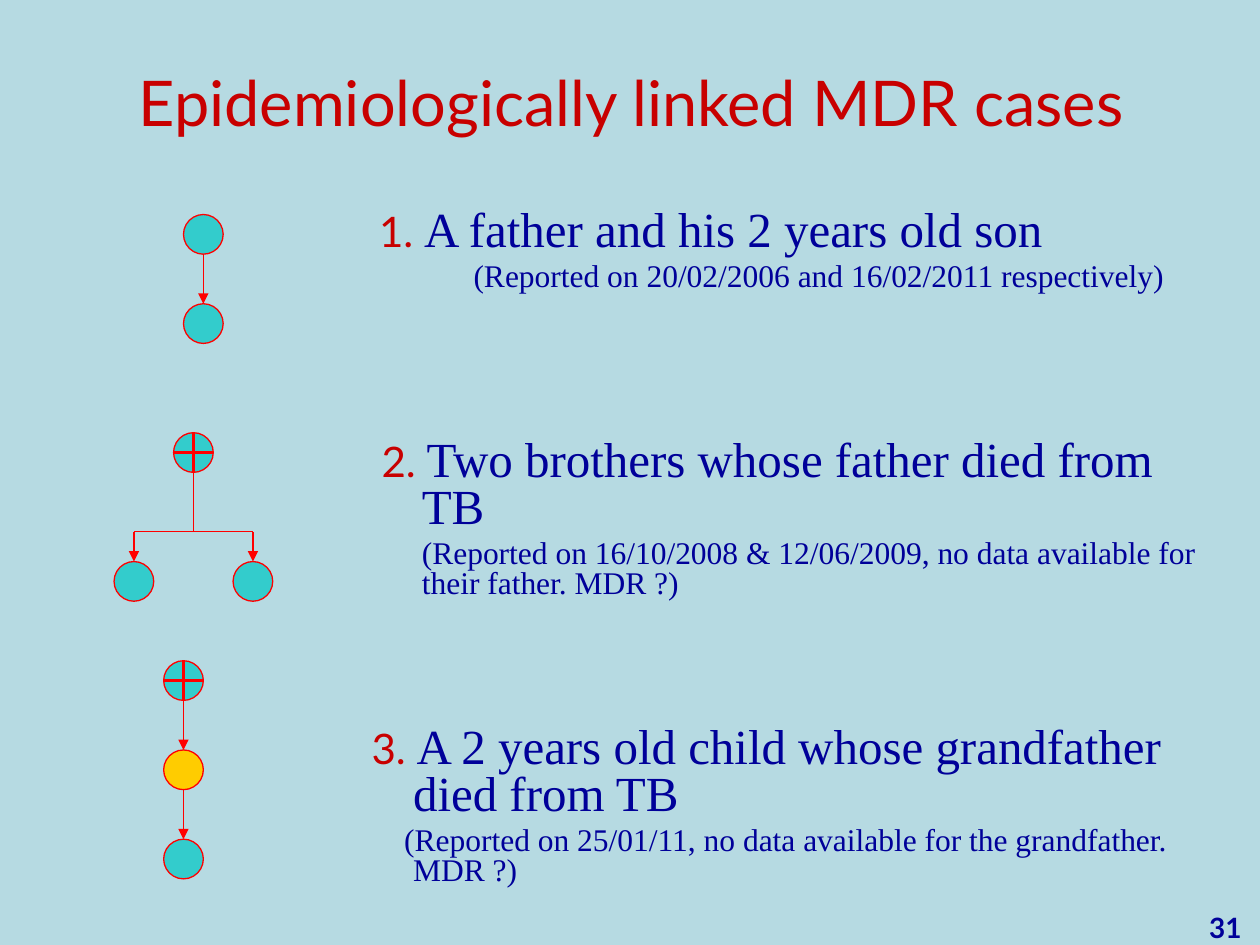
from dataclasses import dataclass
from typing import NamedTuple

from lxml.etree import SubElement
from pptx import Presentation
from pptx.dml.color import RGBColor
from pptx.enum.shapes import MSO_CONNECTOR as Link, MSO_SHAPE as Shape
from pptx.enum.text import MSO_ANCHOR as Anchor, PP_ALIGN as Align
from pptx.oxml.ns import qn
from pptx.util import Inches, Pt


@dataclass(frozen=True)
class Theme:
    background: str = "B6DAE2"
    accent: str = "C80000"
    ink: str = "000099"
    edge: str = "FF0000"
    person: str = "33CCCC"
    highlight: str = "FFCC00"
    sans: str = "Lato"
    serif: str = "Times New Roman"
    title: int = 36
    number: int = 24
    heading: int = 28
    detail: int = 18
    page: int = 16
    thin: float = 0.75
    thick: float = 1.5


class Grid(NamedTuple):
    unit: float = 0.0787
    left: float = 0.04
    top: float = 0.05

    def x(self, column: float) -> int:
        return Inches(self.left + column * self.unit)

    def y(self, row: float) -> int:
        return Inches(self.top + row * self.unit)


class Person(NamedTuple):
    column: int
    row: int
    dead: bool = False
    fill: str = Theme.person


class Arrow(NamedTuple):
    start: tuple
    end: tuple
    head: bool = True


class Case(NamedTuple):
    left: float
    top: float
    width: float
    number: str
    heading: str
    detail: str
    number_at: float
    detail_at: float


THEME, GRID = Theme(), Grid()
RADIUS = 2
HANGING = 0.38

PEOPLE = [
    Person(20, 23), Person(20, 32),
    Person(19, 45, dead=True), Person(13, 58), Person(25, 58),
    Person(18, 68, dead=True), Person(18, 77, fill=THEME.highlight), Person(18, 86),
]
ARROWS = [
    Arrow((20, 25), (20, 30)),
    Arrow((19, 47), (19, 53), head=False),
    Arrow((13, 53), (25, 53), head=False),
    Arrow((13, 53), (13, 56)),
    Arrow((25, 53), (25, 56)),
    Arrow((18, 70), (18, 75)),
    Arrow((18, 79), (18, 84)),
]
CASES = [
    Case(2.72, 1.62, 6.85, "1. ", "A father and his 2 years old son",
         "(Reported on 20/02/2006 and 16/02/2011 respectively)", 0.19, 0.94),
    Case(2.87, 3.44, 6.93, "2. ", "Two brothers whose father died from TB",
         "(Reported on 16/10/2008 & 12/06/2009, no data available for their father. MDR ?)",
         0.06, 0.38),
    Case(2.8, 5.72, 6.85, "3. ", "A 2 years old child whose grandfather died from TB",
         "(Reported on 25/01/11, no data available for the grandfather. MDR ?)", 0.05, 0.31),
]


def color(code: str) -> RGBColor:
    return RGBColor.from_string(code)


def add_span(para, text: str, face: str, size: int, code: str, bold: bool = False) -> None:
    span = para.add_run()
    span.text = text
    for name, value in {"name": face, "size": Pt(size), "bold": bold}.items():
        setattr(span.font, name, value)
    span.font.color.rgb = color(code)


def add_box(page, left: float, top: float, width: float, height: float, anchor=Anchor.TOP):
    box = page.shapes.add_textbox(*map(Inches, (left, top, width, height)))
    frame = box.text_frame
    for name, value in {"word_wrap": True, "vertical_anchor": anchor}.items():
        setattr(frame, name, value)
    return frame


def add_line(page, start: tuple, end: tuple, weight: float, head: bool = False) -> None:
    line = page.shapes.add_connector(
        Link.STRAIGHT, GRID.x(start[0]), GRID.y(start[1]), GRID.x(end[0]), GRID.y(end[1]))
    line.line.color.rgb = color(THEME.edge)
    line.line.width = Pt(weight)
    if head:
        SubElement(line.line._get_or_add_ln(), qn("a:tailEnd"), type="triangle")
    SubElement(line._element.spPr, qn("a:effectLst"))


def add_person(page, person: Person) -> None:
    size = Inches(2 * RADIUS * GRID.unit)
    circle = page.shapes.add_shape(
        Shape.OVAL, GRID.x(person.column - RADIUS), GRID.y(person.row - RADIUS), size, size)
    circle.shadow.inherit = False
    circle.fill.solid()
    circle.fill.fore_color.rgb = color(person.fill)
    circle.line.color.rgb = color(THEME.edge)
    circle.line.width = Pt(THEME.thin)


def add_cross(page, person: Person) -> None:
    column, row = person.column, person.row
    add_line(page, (column, row - RADIUS), (column, row + RADIUS), THEME.thick)
    add_line(page, (column - RADIUS, row), (column + RADIUS, row), THEME.thick)


def format_para(para, first: float) -> None:
    for name, value in {"line_spacing": 0.8, "space_before": Pt(3.6)}.items():
        setattr(para, name, value)
    settings = para._p.get_or_add_pPr()
    settings.set("marL", str(Inches(HANGING)))
    settings.set("indent", str(Inches(first - HANGING)))


def add_case(page, case: Case) -> None:
    frame = add_box(page, case.left, case.top, case.width, 0.55)
    heading, detail = frame.paragraphs[0], frame.add_paragraph()
    format_para(heading, case.number_at)
    format_para(detail, case.detail_at)
    add_span(heading, case.number, THEME.sans, THEME.number, THEME.accent)
    add_span(heading, case.heading, THEME.serif, THEME.heading, THEME.ink)
    add_span(detail, case.detail, THEME.serif, THEME.detail, THEME.ink)


def add_centered(frame, text: str, size: int, code: str, bold: bool = False) -> None:
    para = frame.paragraphs[0]
    para.alignment = Align.CENTER
    add_span(para, text, THEME.sans, size, code, bold)


def main() -> None:
    deck = Presentation()
    deck.slide_width, deck.slide_height = Inches(10), Inches(7.5)
    page = deck.slides.add_slide(deck.slide_layouts[6])
    page.background.fill.solid()
    page.background.fill.fore_color.rgb = color(THEME.background)

    add_centered(add_box(page, 0.51, 0.36, 9, 0.88, Anchor.MIDDLE),
                 "Epidemiologically linked MDR cases", THEME.title, THEME.accent)
    for person in PEOPLE:
        add_person(page, person)
    for arrow in ARROWS:
        add_line(page, arrow.start, arrow.end, THEME.thin, arrow.head)
    for case in CASES:
        add_case(page, case)
    for person in PEOPLE:
        if person.dead:
            add_cross(page, person)
    add_centered(add_box(page, 9.45, 7.18, 0.55, 0.32), "31", THEME.page, THEME.ink, bold=True)
    deck.save("out.pptx")


if __name__ == "__main__":
    main()
